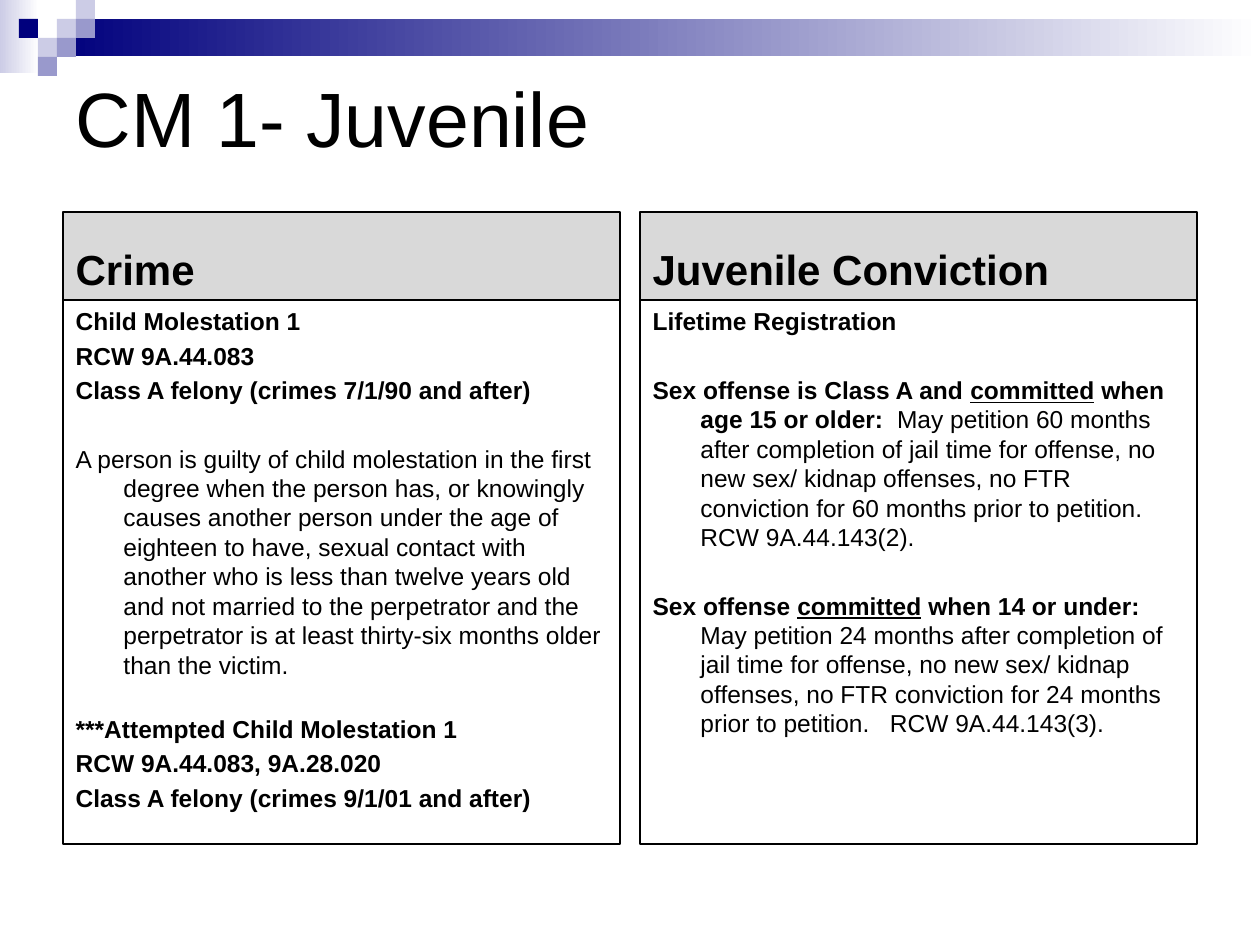
from pptx import Presentation
from pptx.dml.color import RGBColor as RGB
from pptx.enum.shapes import MSO_SHAPE as SHAPE
from pptx.enum.text import MSO_ANCHOR as ANCHOR, MSO_AUTO_SIZE as AUTO, PP_ALIGN as ALIGN
from pptx.oxml.ns import qn
from pptx.util import Inches, Pt
from lxml import etree

PX = Inches(1) / 126
COLORS = {"navy": "00007D", "pale": "CCCCE6", "mid": "9999CC",
          "white": "FFFFFF", "black": "000000", "header": "D9D9D9"}
C = {name: RGB.from_string(value) for name, value in COLORS.items()}


def place(sp, left, top, width, height):
    box = {"left": left, "top": top, "width": width, "height": height}
    for name, value in box.items():
        setattr(sp, name, round(value * PX))


def add_run(p, text, size, **formats):
    r = p.add_run()
    r.text = text
    r.font.color.rgb = C["black"]
    for name, value in {"name": "Arial", "size": Pt(size), **formats}.items():
        setattr(r.font, name, value)


prs = Presentation()
prs.slide_width, prs.slide_height = Inches(10), Inches(7.5)
s = prs.slides.add_slide(prs.slide_layouts[4])
s.background.fill.solid()
s.background.fill.fore_color.rgb = C["white"]

# Corner decoration: two gradient bars, then squares on a 19 px grid
CELL = 19
decor = [((0, 0, 39, 73), ("pale", "white")),
         ((57, 19, 1203, 37), ("navy", "white"))]
squares = [(3, 1, "pale"), (4, 0, "pale"), (4, 1, "mid"), (2, 2, "pale"),
           (1, 1, "navy"), (3, 2, "mid"), (2, 3, "mid")]
decor += [((col * CELL, row * CELL, CELL, CELL), (color,)) for col, row, color in squares]
for i, (box, colors) in enumerate(decor):
    sp = s.shapes.add_shape(SHAPE.RECTANGLE, 0, 0, 0, 0)
    place(sp, *box)
    sp.shadow.inherit = False
    sp.line.fill.background()
    if len(colors) == 2:
        sp.fill.gradient()
        sp.fill.gradient_angle = 0
        for stop, color, position in zip(sp.fill.gradient_stops, colors, (0, 1)):
            stop.color.rgb, stop.position = C[color], position
    else:
        sp.fill.solid()
        sp.fill.fore_color.rgb = C[colors[0]]
    s.shapes._spTree.insert(2 + i, sp._element)  # behind the placeholders

# Title
title = s.shapes.title
place(title, 63, 38, 1134, 157)
tf = title.text_frame
tf.auto_size, tf.vertical_anchor = AUTO.NONE, ANCHOR.MIDDLE
p = tf.paragraphs[0]
p.alignment = ALIGN.LEFT
add_run(p, "CM 1- Juvenile", 44)

# Columns: header and paragraphs as (space before, runs); B bold, U bold underlined
N, B, U = {"bold": False}, {"bold": True}, {"bold": True, "underline": True}
TIGHT, WIDE = 2.8, 22.4
columns = [
    ("Crime", [
        (TIGHT, [("Child Molestation 1", B)]),
        (TIGHT, [("RCW 9A.44.083", B)]),
        (TIGHT, [("Class A felony (crimes 7/1/90 and after)", B)]),
        (WIDE, [("A person is guilty of child molestation in the first degree when the "
                 "person has, or knowingly causes another person under the age of eighteen "
                 "to have, sexual contact with another who is less than twelve years old "
                 "and not married to the perpetrator and the perpetrator is at least "
                 "thirty-six months older than the victim.", N)]),
        (20, [("***Attempted Child Molestation 1", B)]),
        (TIGHT, [("RCW 9A.44.083, 9A.28.020", B)]),
        (TIGHT, [("Class A felony (crimes 9/1/01 and after)", B)]),
    ]),
    ("Juvenile Conviction", [
        (TIGHT, [("Lifetime Registration", B)]),
        (WIDE, [("Sex offense is Class A and ", B), ("committed", U),
                (" when age 15 or older:", B),
                ("  May petition 60 months after completion of jail time for offense, "
                 "no new sex/ kidnap offenses, no FTR conviction for 60 months prior to "
                 "petition.   RCW 9A.44.143(2).", N)]),
        (WIDE, [("Sex offense ", B), ("committed", U), (" when 14 or under:", B),
                ("  May petition 24 months after completion of jail time for offense, "
                 "no new sex/ kidnap offenses, no FTR conviction for 24 months prior to "
                 "petition.   RCW 9A.44.143(3).", N)]),
    ]),
]
for i, (heading, paragraphs) in enumerate(columns):
    left = 63 + i * 577
    head, body = s.placeholders[1 + 2 * i], s.placeholders[2 + 2 * i]
    place(head, left, 212, 557, 88)
    place(body, left, 300, 557, 544)
    for sp, anchor in ((head, ANCHOR.BOTTOM), (body, ANCHOR.TOP)):
        sp.line.color.rgb, sp.line.width = C["black"], Pt(0.75)
        sp.text_frame.auto_size, sp.text_frame.vertical_anchor = AUTO.NONE, anchor
    head.fill.solid()
    head.fill.fore_color.rgb = C["header"]
    add_run(head.text_frame.paragraphs[0], heading, 24, **B)

    tf = body.text_frame
    for j, (space, runs) in enumerate(paragraphs):
        p = tf.add_paragraph() if j else tf.paragraphs[0]
        p.line_spacing, p.space_before = Pt(16.8), Pt(space)
        pPr = p._p.get_or_add_pPr()
        pPr.set("marL", str(Inches(0.38)))
        pPr.set("indent", str(-Inches(0.38)))
        etree.SubElement(pPr, qn("a:buNone"))
        for text, formats in runs:
            add_run(p, text, 14, **formats)

prs.save("out.pptx")
